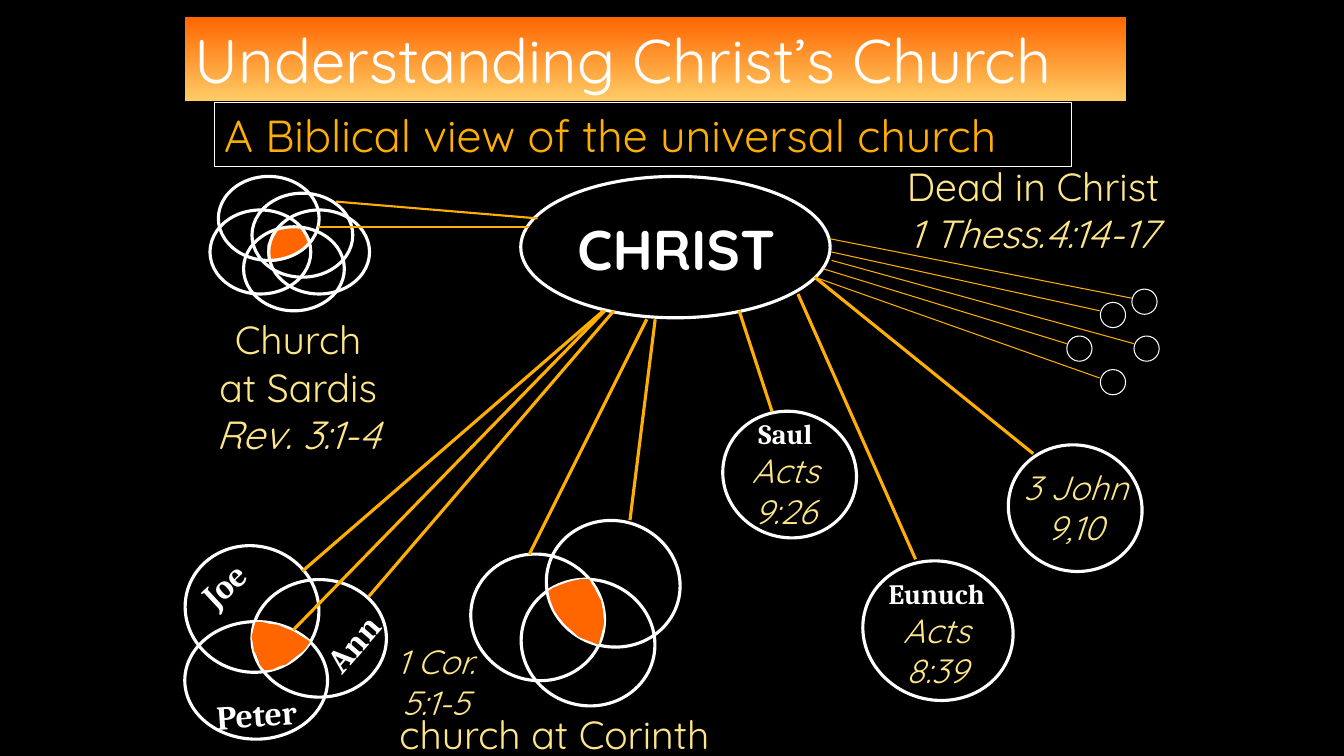
from pptx import Presentation
from pptx.dml.color import RGBColor
from pptx.enum.shapes import MSO_CONNECTOR, MSO_SHAPE
from pptx.enum.text import MSO_ANCHOR, MSO_AUTO_SIZE, PP_ALIGN
from pptx.oxml.ns import qn
from pptx.util import Pt
from lxml import etree

OVAL, RECT = MSO_SHAPE.OVAL, MSO_SHAPE.RECTANGLE
STRAIGHT = MSO_CONNECTOR.STRAIGHT
TOP, GROW = MSO_ANCHOR.TOP, MSO_AUTO_SIZE.SHAPE_TO_FIT_TEXT
LEFT, CENTER = PP_ALIGN.LEFT, PP_ALIGN.CENTER

COLORS = {"black": "000000", "white": "FFFFFF", "amber": "FFAF03",
          "cream": "FDE689", "orange": "FF6600", "peach": "FFCC66"}

# Text styles: colour and font attributes
STYLES = {
    "title": ("white", {"name": "Quicksand", "size": Pt(44)}),
    "subtitle": ("amber", {"name": "Quicksand", "size": Pt(32)}),
    "christ": ("white", {"name": "Quicksand", "size": Pt(40), "bold": True}),
    "church": ("cream", {"name": "Quicksand", "size": Pt(28)}),
    "church verse": ("cream", {"name": "Quicksand", "size": Pt(28), "italic": True}),
    "verse": ("cream", {"name": "Quicksand", "size": Pt(24), "italic": True}),
    "member": ("white", {"name": "Cambria", "size": Pt(24), "bold": True}),
    "person": ("white", {"name": "Cambria", "size": Pt(20), "bold": True}),
}

# Headings: left, top, width, height, style, wording
TITLE = (132, 12, 672.5, 60.5, "title", "Understanding Christ’s Church")
SUBTITLE = (153, 73.5, 612.5, 45.5, "subtitle", "A Biblical view of the universal church")

# Labels: left, top, width, height, rotation, [(wording, style)]
LABELS = [
    (366, 150, 234, 55.5, 0, [("CHRIST", "christ")]),
    (96.5, 399.5, 126.5, 36.5, 317, [("Joe", "member")]),
    (188.5, 441.5, 126.5, 36, 311, [("Ann", "member")]),
    (120, 492, 126.5, 36, 356, [("Peter", "member")]),
    (264, 504, 264, 41, 0, [("church at Corinth", "church")]),
    (260.5, 454.5, 102, 65, 0, [("1 Cor.", "verse"), ("5:1-5", "verse")]),
    (498, 294, 126, 119, 0, [("Saul", "person"), ("Acts", "verse"), ("9:26", "verse")]),
    (606, 408, 126, 119, 0, [("Eunuch", "person"), ("Acts", "verse"), ("8:39", "verse")]),
    (702, 330, 132.5, 94.5, 0, [("3 John", "verse"), ("9,10", "verse")]),
    (606, 112.5, 264, 75, 0,
     [("Dead in Christ", "church"), ("1 Thess.4:14-17", "church verse")]),
    (138, 222, 150, 108.5, 0,
     [("Church", "church"), ("at Sardis", "church"), ("Rev. 3:1-4", "church verse")]),
]

# Circles: (width, height, rotation, line weight, [(left, top)])
CIRCLES = [
    (221, 101, 0, 2.25, [(372, 126)]),  # Christ
    (96, 84, 0, 2.25, [(180, 414)]),  # Ann
    (102, 84, 0, 2.25, [(132, 444)]),  # Peter
    (96, 90, 16, 2.25, [(132, 390), (372, 414), (336, 396), (390, 372),
                        (516, 294), (720, 318)]),  # Joe, Corinth, Saul, 3 John
    (108, 99, 16, 2.25, [(616, 401)]),  # Eunuch
    (72, 60, 0, 2.25, [(174, 162), (192, 150), (150, 150), (180, 138), (156, 126)]),  # Sardis
    (18, 18, 0, 0.75, [(808.5, 206.5), (786, 264), (762, 240), (810, 240), (786, 216)]),  # Dead
]

# Links to Christ: line weight, [(from x, from y, to x, to y)]
LINKS = [
    (2.25, [(431, 222, 216, 408), (438.5, 222, 263.5, 426), (432, 222, 209.5, 450),
            (462, 228, 378, 396), (468, 228, 450, 371.5), (528, 222, 551.5, 294),
            (570, 210, 654, 399.5), (582, 198, 738, 324)]),
    (0.75, [(592.5, 170.5, 808.5, 213), (582, 198, 785.5, 270), (588, 192, 762, 245.5),
            (594, 186, 810, 245.5), (594, 180, 785.5, 222)]),
    (1.5, [(384, 156, 240, 144), (378, 162, 227.5, 162)]),
]

# Overlaps shared by every circle of a church
SARDIS_CORE = [
    (193, 186), (192, 183), (192, 175), (193.5, 172), (194.5, 168.5), (196.5, 165.5),
    (205, 163.5), (207.5, 162.5), (216, 163.5), (218, 167), (221, 172), (219.5, 174),
    (218, 175.5), (216, 176.5), (214, 178.5), (210, 180.5), (207.5, 181.5),
    (201, 183.5), (199.5, 184.5), (196.5, 186)]
CORINTH_CORE = [
    (392.5, 422.5), (394, 429), (396.5, 435.5), (399.5, 440), (404, 445.5), (409, 450),
    (414, 454.5), (420.5, 457), (427, 459.5), (429, 452), (430.5, 446.5), (430.5, 442),
    (430, 436.5), (428.5, 429), (426, 425), (424, 420.5), (422, 417.5), (420.5, 414.5),
    (414.5, 414.5), (409.5, 415.5), (404.5, 417), (400.5, 418.5), (395.5, 420.5)]
MEMBERS_CORE = [
    (183, 445), (181.5, 450.5), (180.5, 455), (181.5, 460), (182, 464.5), (184.5, 468.5),
    (186, 474), (188, 476.5), (189.5, 478), (194.5, 477.5), (199.5, 475), (204, 474),
    (209, 470), (211.5, 468), (215.5, 465), (217.5, 463), (220.5, 458.5), (214, 454.5),
    (209, 451.5), (204, 449.5), (198, 447), (193, 446.5), (187, 445)]


def rgb(name):
    return RGBColor.from_string(COLORS[name])


def points(*values):
    return [Pt(value) for value in values]


def set_line(shape, color, weight):
    shape.line.color.rgb = rgb(color)
    shape.line.width = Pt(weight)


def write(box, lines, align):
    frame = box.text_frame
    for name, value in {"word_wrap": True, "auto_size": GROW, "vertical_anchor": TOP}.items():
        setattr(frame, name, value)
    for index, (wording, style) in enumerate(lines):
        para = frame.add_paragraph() if index else frame.paragraphs[0]
        para.alignment = align
        span = para.add_run()
        span.text = wording
        color, formats = STYLES[style]
        span.font.color.rgb = rgb(color)
        for name, value in formats.items():
            setattr(span.font, name, value)


def add_heading(page, left, top, width, height, style, wording):
    box = page.shapes.add_shape(RECT, *points(left, top, width, height))
    box.shadow.inherit = False
    write(box, [(wording, style)], LEFT)
    return box


def add_core(page, outline, weight):
    corners = [points(*corner) for corner in outline]
    builder = page.shapes.build_freeform(*corners[0])
    builder.add_line_segments(corners[1:], close=True)
    core = builder.convert_to_shape()
    core.shadow.inherit = False
    core.fill.solid()
    core.fill.fore_color.rgb = rgb("orange")
    set_line(core, "orange", weight)


def main():
    deck = Presentation()
    deck.slide_width, deck.slide_height = points(960, 540)
    page = deck.slides.add_slide(deck.slide_layouts[6])
    page.background.fill.solid()
    page.background.fill.fore_color.rgb = rgb("black")

    # Headings
    title = add_heading(page, *TITLE)
    title.line.fill.background()
    title.fill.gradient()
    title.fill.gradient_angle = 270
    for stop, color in zip(title.fill.gradient_stops, ("orange", "peach")):
        stop.color.rgb = rgb(color)
    for position, stop in enumerate(title.fill.gradient_stops):
        stop.position = position
    subtitle = add_heading(page, *SUBTITLE)
    subtitle.fill.background()
    set_line(subtitle, "white", 0.75)

    # Circles, with the Sardis overlap beneath them
    add_core(page, SARDIS_CORE, 2.25)
    for width, height, rotation, weight, corners in CIRCLES:
        for left, top in corners:
            circle = page.shapes.add_shape(OVAL, *points(left, top, width, height))
            circle.rotation = rotation
            circle.shadow.inherit = False
            circle.fill.background()
            set_line(circle, "white", weight)

    # Links to Christ
    for weight, links in LINKS:
        for ends in links:
            link = page.shapes.add_connector(STRAIGHT, *points(*ends))
            set_line(link, "amber", weight)
            etree.SubElement(link._element.spPr, qn("a:effectLst"))

    # Overlaps above the circles
    for outline in (CORINTH_CORE, MEMBERS_CORE):
        add_core(page, outline, 1.5)

    # Labels
    for left, top, width, height, rotation, lines in LABELS:
        label = page.shapes.add_textbox(*points(left, top, width, height))
        label.rotation = rotation
        write(label, lines, CENTER)

    deck.save("out.pptx")


if __name__ == "__main__":
    main()
